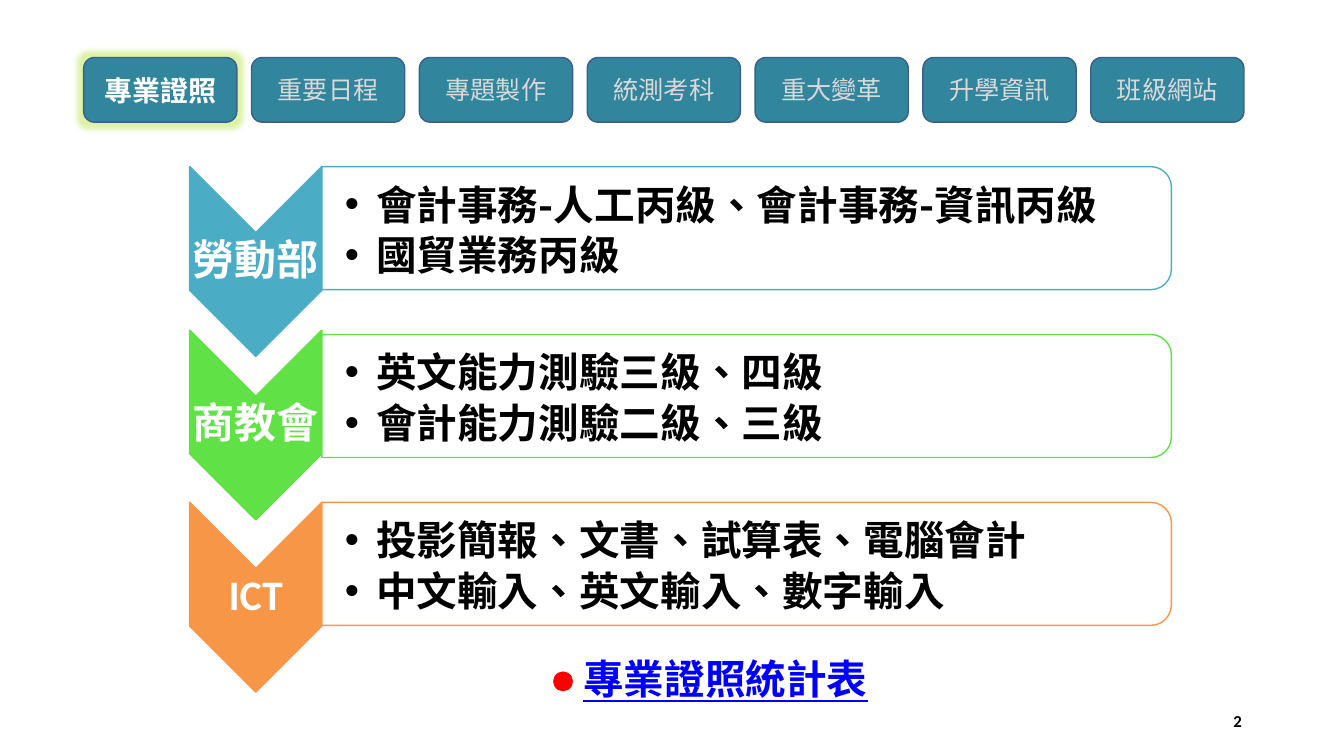
from lxml.etree import SubElement
from pptx import Presentation
from pptx.dml.color import RGBColor
from pptx.enum.shapes import MSO_SHAPE
from pptx.enum.text import MSO_ANCHOR, MSO_AUTO_SIZE, PP_ALIGN
from pptx.oxml.ns import qn
from pptx.util import Cm, Pt

# Colours
WHITE = RGBColor(0xFF, 0xFF, 0xFF)
BLACK = RGBColor(0x00, 0x00, 0x00)
TEAL = RGBColor(0x31, 0x85, 0x9C)
NAVY = RGBColor(0x3A, 0x5F, 0x8C)
GREY = RGBColor(0xD9, 0xD9, 0xD9)
GLOW = RGBColor(0xC6, 0xEA, 0x6A)
AQUA = RGBColor(0x4B, 0xAC, 0xC6)
GREEN = RGBColor(0x60, 0xE1, 0x46)
ORANGE = RGBColor(0xF7, 0x96, 0x46)
BLUE = RGBColor(0x00, 0x00, 0xFF)
RED = RGBColor(0xFF, 0x00, 0x00)

LATIN = "Calibri"
CJK = "Noto Sans CJK SC"

# Content
TABS = ["專業證照", "重要日程", "專題製作", "統測考科", "重大變革", "升學資訊", "班級網站"]
# issuer, label font, colour, top of chevron in cm, certificates
ISSUERS = [
    ("勞動部", CJK, AQUA, 4.2, ["會計事務-人工丙級、會計事務-資訊丙級", "國貿業務丙級"]),
    ("商教會", CJK, GREEN, 8.32, ["英文能力測驗三級、四級", "會計能力測驗二級、三級"]),
    ("ICT", LATIN, ORANGE, 12.66, ["投影簡報、文書、試算表、電腦會計", "中文輸入、英文輸入、數字輸入"]),
]

# Layout in cm
PITCH = 4.23
TAB_LEFT, TAB_TOP, TAB_W, TAB_H = 2.11, 1.45, 3.86, 1.63
CHEVRON_LEFT, CHEVRON_W, CHEVRON_H = 4.78, 3.33, 4.78
PANEL_LEFT, PANEL_TOP, PANEL_W, PANEL_H = 8.11, 4.2, 21.41, 3.1


def write(tf, lines, size=18, color=BLACK, font=LATIN, bold=False, underline=False,
          align=PP_ALIGN.LEFT, anchor=MSO_ANCHOR.MIDDLE, spacing=1.0, after=0,
          bullet=False, insets=(0.25, 0.13, 0.25, 0.13)):
    """Fill a text frame with one paragraph per line."""
    tf.word_wrap = True
    tf.auto_size = MSO_AUTO_SIZE.NONE
    tf.vertical_anchor = anchor
    tf.margin_left, tf.margin_top, tf.margin_right, tf.margin_bottom = map(Cm, insets)
    for i, line in enumerate(lines):
        p = tf.add_paragraph() if i else tf.paragraphs[0]
        p.alignment = align
        p.line_spacing = spacing
        p.space_before, p.space_after = Pt(0), Pt(after)
        if bullet:
            pPr = p._p.get_or_add_pPr()
            pPr.set("marL", str(Cm(0.79)))
            pPr.set("indent", str(Cm(-0.79)))
            SubElement(pPr, qn("a:buFont"), typeface="Arial")
            SubElement(pPr, qn("a:buChar"), char="•")
        r = p.add_run()
        r.text = line
        r.font.size, r.font.bold, r.font.underline = Pt(size), bold, underline
        r.font.color.rgb = color
        r.font.name = font
        rPr = r._r.get_or_add_rPr()
        rPr.set("lang", "zh-TW")
        SubElement(rPr, qn("a:ea"), typeface=CJK)


class Deck:
    """The presentation, its current slide and its drawing style."""

    def __init__(self):
        self.prs = Presentation()
        self.prs.slide_width, self.prs.slide_height = Cm(33.87), Cm(19.05)
        self.s = self.prs.slides.add_slide(self.prs.slide_layouts[4])

    def shape(self, kind, x, y, w, h, fill, line=None, turned=False):
        """Draw a preset shape in the box that it covers on the slide."""
        if turned:
            x, y, w, h = x + (w - h) / 2, y + (h - w) / 2, h, w
        sp = self.s.shapes.add_shape(kind, Cm(x), Cm(y), Cm(w), Cm(h))
        sp.rotation = 90 if turned else 0
        sp.shadow.inherit = False
        sp.fill.solid()
        sp.fill.fore_color.rgb = fill
        if line is None:
            sp.line.fill.background()
        else:
            sp.line.color.rgb = line
            sp.line.width = Pt(1)
        return sp

    def glow(self, sp, color, radius):
        effects = sp._element.spPr.find(qn("a:effectLst"))
        halo = SubElement(effects, qn("a:glow"), rad=str(Pt(radius)))
        clr = SubElement(halo, qn("a:srgbClr"), val=str(color))
        SubElement(clr, qn("a:alpha"), val="60000")

    def text(self, x, y, w, h, line, **fmt):
        sp = self.s.shapes.add_textbox(Cm(x), Cm(y), Cm(w), Cm(h))
        write(sp.text_frame, [line], **fmt)

    def placeholder(self, idx, x, y, w, h, lines, **fmt):
        """Move a placeholder to its box, in front of what is drawn so far."""
        sp = next(ph for ph in self.s.placeholders if ph.placeholder_format.idx == idx)
        sp.left, sp.top, sp.width, sp.height = Cm(x), Cm(y), Cm(w), Cm(h)
        sp.element.getparent().append(sp.element)
        write(sp.text_frame, lines, **fmt)

    def drop_empty_placeholders(self):
        for ph in list(self.s.placeholders):
            if not ph.text_frame.text:
                ph.element.getparent().remove(ph.element)


def main():
    deck = Deck()

    # Navigation tabs; the current one carries the slide title
    for i, name in enumerate(TABS):
        box = (TAB_LEFT + i * PITCH, TAB_TOP, TAB_W, TAB_H)
        tab = deck.shape(MSO_SHAPE.FLOWCHART_ALTERNATE_PROCESS, *box, TEAL, NAVY)
        if i == 0:
            deck.glow(tab, GLOW, 8)
            deck.placeholder(0, *box, [name], size=20, color=WHITE, font=CJK,
                             bold=True, align=PP_ALIGN.CENTER)
        else:
            write(tab.text_frame, [name], color=GREY, align=PP_ALIGN.CENTER)

    # One chevron and one list panel for each issuer
    for i, (issuer, font, color, top, certificates) in enumerate(ISSUERS):
        chevron = (CHEVRON_LEFT, top, CHEVRON_W, CHEVRON_H)
        panel = (PANEL_LEFT, PANEL_TOP + i * PITCH, PANEL_W, PANEL_H)
        deck.shape(MSO_SHAPE.CHEVRON, *chevron, color, color, turned=True)
        deck.text(*chevron, issuer, size=30, color=WHITE, font=font, bold=True,
                  align=PP_ALIGN.CENTER, spacing=0.9, after=10, insets=[0.05] * 4)
        deck.shape(MSO_SHAPE.ROUND_2_SAME_RECTANGLE, *panel, WHITE, color, turned=True)
        deck.placeholder(i + 1, *panel, certificates, size=29, font=CJK, bold=True,
                         spacing=Pt(36), bullet=True, insets=(0.58, 0.05, 0.05, 0.05))
    deck.drop_empty_placeholders()

    # Statistics line and slide number
    deck.text(14.45, 16.36, 7.7, 1.5, "專業證照統計表", size=29, color=BLUE, bold=True,
              underline=True, anchor=MSO_ANCHOR.TOP)
    deck.shape(MSO_SHAPE.FLOWCHART_CONNECTOR, 13.94, 16.92, 0.5, 0.5, RED)
    deck.text(23.93, 17.65, 7.62, 1.02, "2", size=12, bold=True, align=PP_ALIGN.RIGHT)

    deck.prs.save("out.pptx")


if __name__ == "__main__":
    main()
